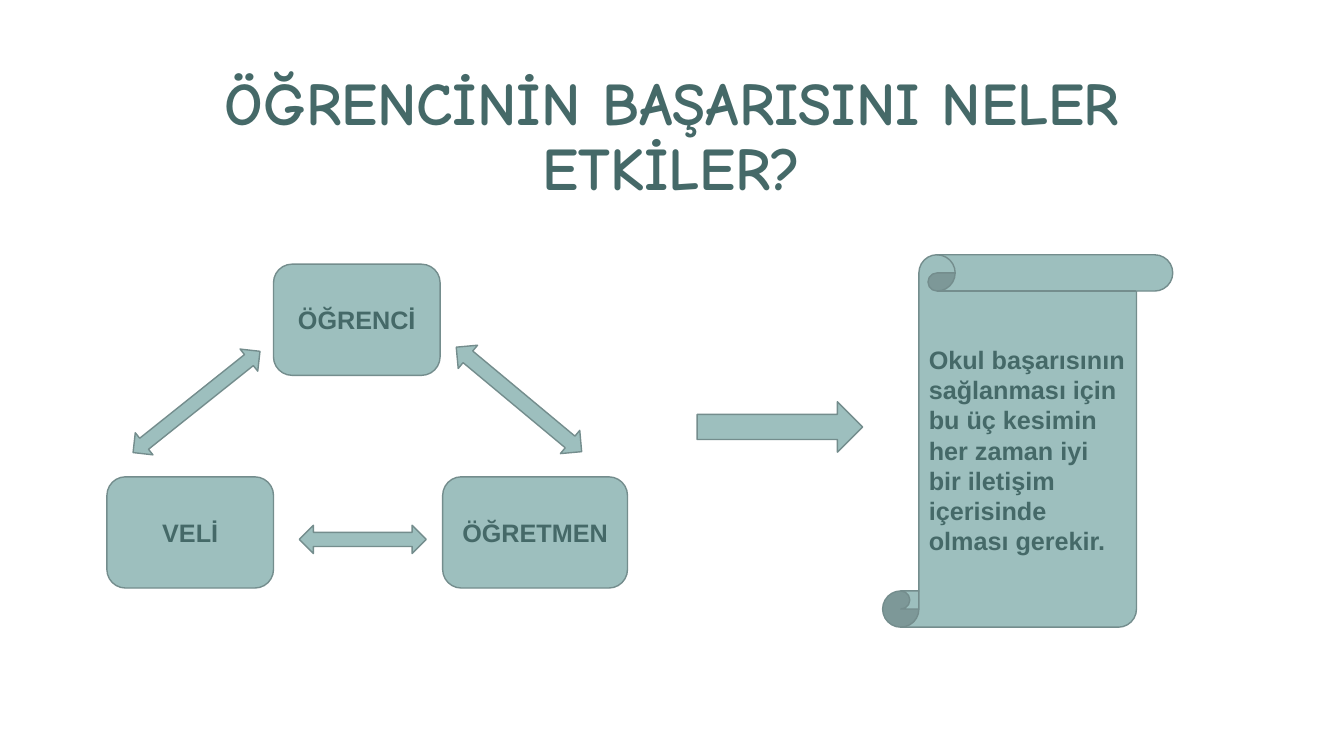
from pptx import Presentation
from pptx.dml.color import RGBColor
from pptx.enum import shapes, text
from pptx.util import Pt

TEAL = RGBColor(0x9D, 0xBF, 0xBE)
EDGE = RGBColor(0x74, 0x8D, 0x8D)
DARK = RGBColor(0x45, 0x69, 0x68)
KIND = shapes.MSO_SHAPE
CENTER = text.PP_ALIGN.CENTER
LEFT = text.PP_ALIGN.LEFT


def write(frame, words, font_name, size, align):
    frame.text = words
    frame.word_wrap = True
    frame.vertical_anchor = text.MSO_ANCHOR.MIDDLE
    paragraph = frame.paragraphs[0]
    paragraph.alignment = align
    font = paragraph.runs[0].font
    font.name = font_name
    font.size = Pt(size)
    font.bold = True
    font.color.rgb = DARK


def draw(kind, left, top, width, height):
    figure = slide.shapes.add_shape(kind, Pt(left), Pt(top), Pt(width), Pt(height))
    figure.shadow.inherit = False
    figure.fill.solid()
    figure.fill.fore_color.rgb = TEAL
    figure.line.color.rgb = EDGE
    figure.line.width = Pt(1)
    return figure


deck = Presentation()
deck.slide_width = Pt(960)
deck.slide_height = Pt(540)
slide = deck.slides.add_slide(deck.slide_layouts[5])

question = slide.shapes.title
question.left, question.top = Pt(66), Pt(46.8)
question.width, question.height = Pt(828), Pt(104.4)
write(question.text_frame, "ÖĞRENCİNİN BAŞARISINI NELER ETKİLER?", "Comic Neue", 43.2, CENTER)
question.text_frame.auto_size = text.MSO_AUTO_SIZE.NONE
question.text_frame.paragraphs[0].line_spacing = 0.9

for party, left, top, width in [
    ("ÖĞRENCİ", 195.4, 188.7, 119),
    ("VELİ", 76.4, 340.6, 119),
    ("ÖĞRETMEN", 316.2, 340.6, 132),
]:
    box = draw(KIND.ROUNDED_RECTANGLE, left, top, width, 79.4)
    write(box.text_frame, party, "Arial", 18, CENTER)

conclusion = draw(KIND.VERTICAL_SCROLL, 630.5, 182, 207.2, 266)
write(
    conclusion.text_frame,
    "Okul başarısının sağlanması için bu üç kesimin her zaman iyi "
    "bir iletişim içerisinde olması gerekir.",
    "Arial", 18, LEFT,
)

for kind, left, top, width, height, angle in [
    (KIND.LEFT_RIGHT_ARROW, 82.4, 277, 116, 20.2, 321.4),
    (KIND.LEFT_RIGHT_ARROW, 312.4, 274.5, 116.6, 21.6, 39.8),
    (KIND.RIGHT_ARROW, 498, 287, 118.2, 36, 0),
    (KIND.LEFT_RIGHT_ARROW, 213.8, 375.2, 90.7, 20.2, 0),
]:
    draw(kind, left, top, width, height).rotation = angle

deck.save("out.pptx")
